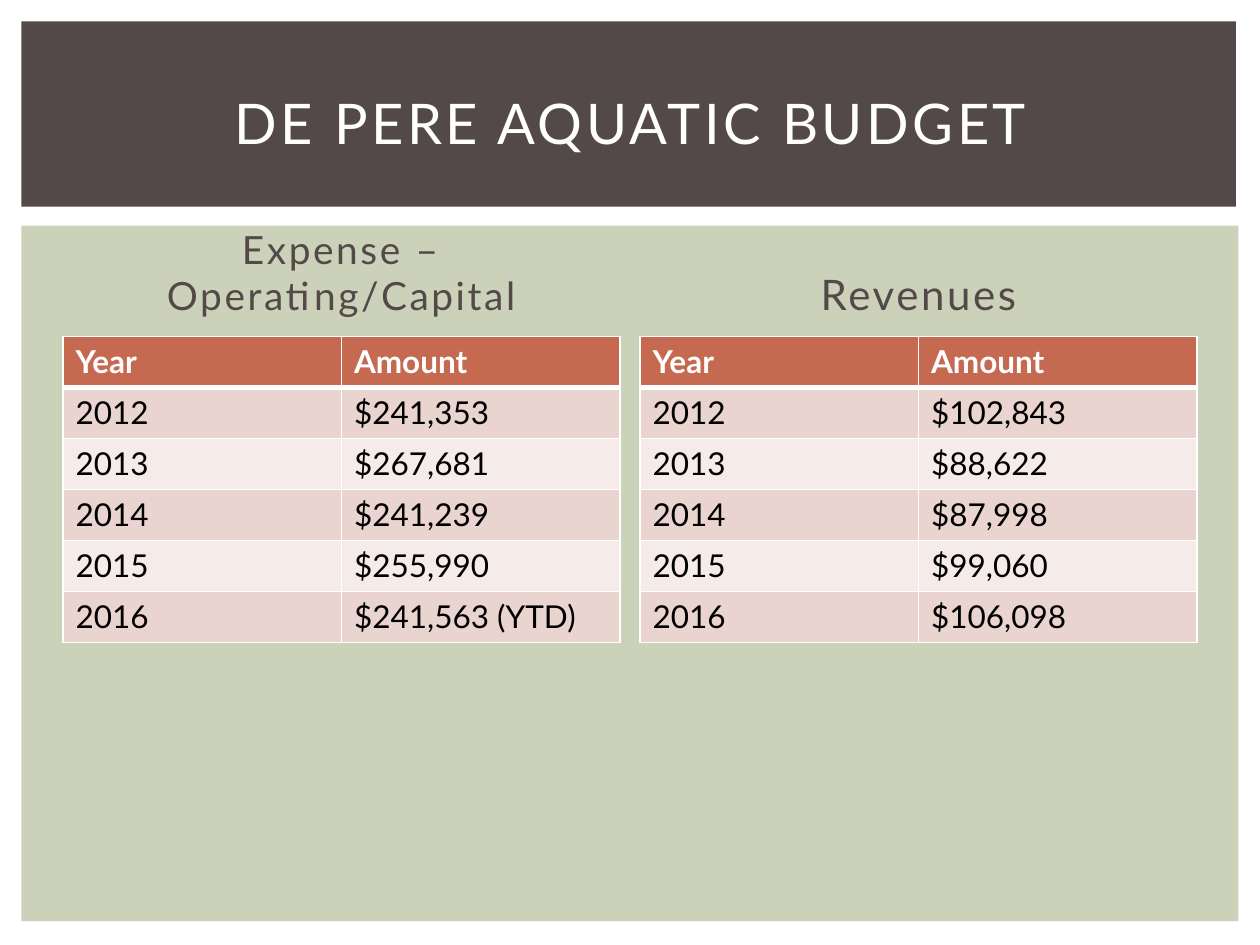
from pptx import Presentation
from pptx.dml.color import RGBColor
from pptx.enum.shapes import MSO_SHAPE
from pptx.enum.text import MSO_ANCHOR, MSO_AUTO_SIZE, PP_ALIGN
from pptx.oxml.ns import qn
from pptx.util import Inches, Pt
from lxml import etree

RECTANGLE = MSO_SHAPE.RECTANGLE
MIDDLE, BOTTOM = MSO_ANCHOR.MIDDLE, MSO_ANCHOR.BOTTOM
CENTER = PP_ALIGN.CENTER
NO_AUTOFIT = MSO_AUTO_SIZE.NONE
COMPARISON_LAYOUT = 4

COLORS = {
    "panel": "CCD1B9", "band": "534949", "white": "FFFFFF", "black": "000000",
    "header": "C66951", "odd": "EAD4D0", "even": "F5EBE9",
}
FONT = "Lato"
MARGIN, COLUMN_WIDTH, COLUMN_STEP = 0.5, 4.42, 4.58
HEADING_TOP, HEADING_HEIGHT = 1.88, 0.7
TABLE_TOP, ROW_HEIGHT = 2.67, 0.405
HEADER = ("Year", "Amount")
YEARS = range(2012, 2017)
BUDGETS = [
    {"heading": "Expense – Operating/Capital", "size": 22.2, "placeholder": 1,
     "amounts": ["$241,353", "$267,681", "$241,239", "$255,990", "$241,563 (YTD)"]},
    {"heading": "Revenues", "size": 24, "placeholder": 3,
     "amounts": ["$102,843", "$88,622", "$87,998", "$99,060", "$106,098"]},
]


def rgb(name):
    return RGBColor.from_string(COLORS[name])


def apply(target, formats):
    for name, value in formats.items():
        setattr(target, name, value)


def box(left, top, width, height):
    return {"left": Inches(left), "top": Inches(top),
            "width": Inches(width), "height": Inches(height)}


def add_panel(slide, color, place):
    panel = slide.shapes.add_shape(RECTANGLE, *place.values())
    panel.shadow.inherit = False
    panel.fill.solid()
    panel.fill.fore_color.rgb = rgb(color)
    panel.line.fill.background()
    return panel


def send_to_back(slide, panels):
    tree = slide.shapes.element
    for position, panel in enumerate(panels, start=2):
        tree.insert(position, panel.element)


def format_run(run, size, color, bold=False, spacing=0):
    apply(run.font, {"name": FONT, "size": Pt(size), "bold": bold})
    run.font.color.rgb = rgb(color)
    if spacing:
        run.font._element.set("spc", str(int(spacing * 100)))


def fill_placeholder(shape, text, place, anchor, **run_format):
    apply(shape, place)
    frame = shape.text_frame
    apply(frame, {"word_wrap": True, "auto_size": NO_AUTOFIT, "vertical_anchor": anchor})
    paragraph = frame.paragraphs[0]
    paragraph.alignment = CENTER
    run = paragraph.add_run()
    run.text = text
    format_run(run, **run_format)


def set_borders(cell, bottom):
    properties = cell._tc.get_or_add_tcPr()
    widths = {"a:lnL": 1, "a:lnR": 1, "a:lnT": 1, "a:lnB": bottom}
    for position, (tag, width) in enumerate(widths.items()):
        line = etree.Element(qn(tag), w=str(Pt(width)))
        fill = etree.SubElement(line, qn("a:solidFill"))
        etree.SubElement(fill, qn("a:srgbClr"), val=COLORS["white"])
        properties.insert(position, line)


def format_cell(cell, text, row):
    is_header = row == 0
    cell.fill.solid()
    cell.fill.fore_color.rgb = rgb("header" if is_header else "odd" if row % 2 else "even")
    run = cell.text_frame.paragraphs[0].add_run()
    run.text = text
    format_run(run, 18, "white" if is_header else "black", bold=is_header)
    set_borders(cell, bottom=3 if is_header else 1)


def add_budget_table(slide, left, amounts):
    rows = [HEADER, *zip(map(str, YEARS), amounts)]
    place = box(left, TABLE_TOP, COLUMN_WIDTH, ROW_HEIGHT * len(rows))
    table = slide.shapes.add_table(len(rows), len(HEADER), *place.values()).table
    for row, texts in enumerate(rows):
        for column, text in enumerate(texts):
            format_cell(table.cell(row, column), text, row)


def main():
    presentation = Presentation()
    apply(presentation, {"slide_width": Inches(10), "slide_height": Inches(7.5)})
    slide = presentation.slides.add_slide(presentation.slide_layouts[COMPARISON_LAYOUT])
    send_to_back(slide, [
        add_panel(slide, "panel", box(0.17, 1.79, 9.66, 5.52)),
        add_panel(slide, "band", box(0.17, 0.17, 9.64, 1.47)),
    ])
    fill_placeholder(slide.shapes.title, "DE PERE AQUATIC BUDGET",
                     box(0.42, 0.39, 9.17, 1.15), MIDDLE,
                     size=32, color="white", spacing=2)
    placeholders = {shape.placeholder_format.idx: shape for shape in slide.placeholders}
    for column, budget in enumerate(BUDGETS):
        left = MARGIN + column * COLUMN_STEP
        fill_placeholder(placeholders[budget["placeholder"]], budget["heading"],
                         box(left, HEADING_TOP, COLUMN_WIDTH, HEADING_HEIGHT), BOTTOM,
                         size=budget["size"], color="band", spacing=1.5)
        add_budget_table(slide, left, budget["amounts"])
    for shape in placeholders.values():
        if not shape.text_frame.text:
            shape.element.getparent().remove(shape.element)
    presentation.save("out.pptx")


if __name__ == "__main__":
    main()
